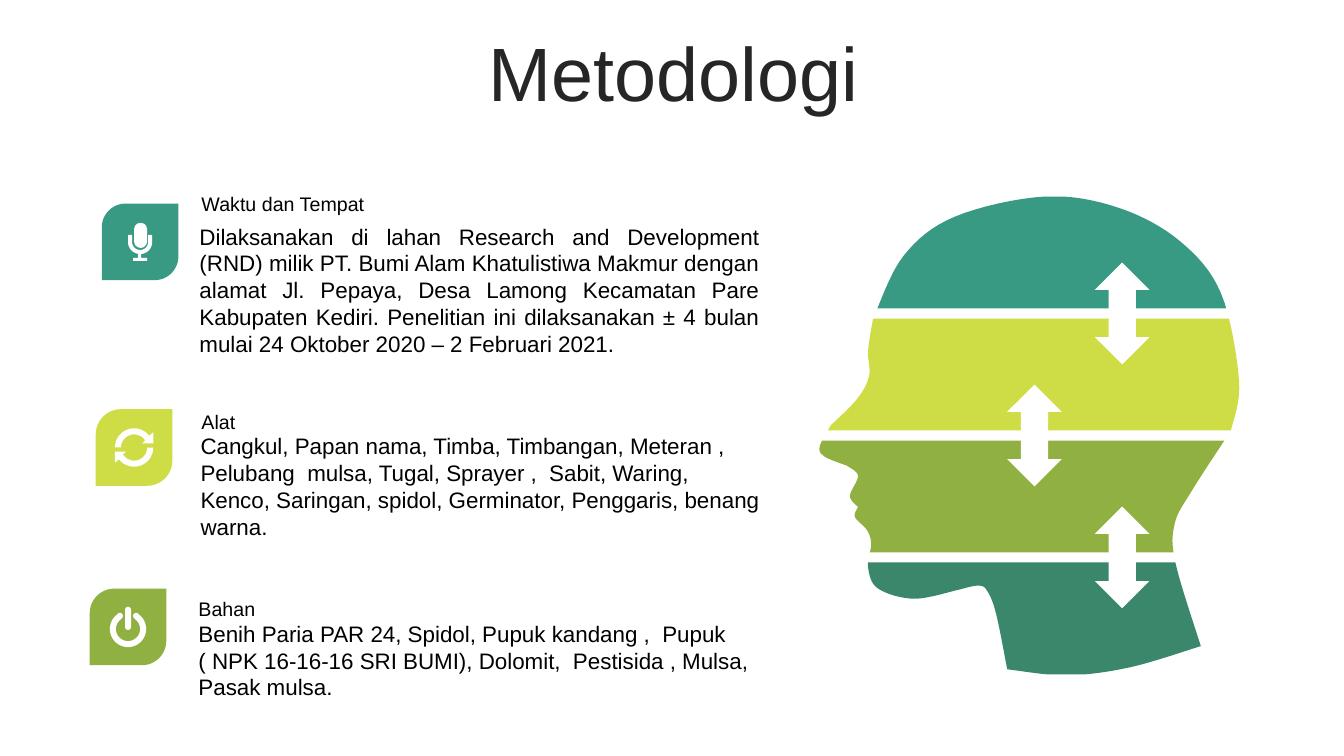
from dataclasses import dataclass
from math import cos, radians, sin
from typing import Callable

from pptx import Presentation
from pptx.dml.color import RGBColor
from pptx.enum.shapes import MSO_SHAPE
from pptx.enum.text import MSO_ANCHOR, PP_ALIGN
from pptx.util import Inches, Pt


@dataclass(frozen=True)
class Theme:
    font: str = "Arial"
    title_size: int = 54
    heading_size: int = 14
    body_size: int = 16
    ink: str = "000000"
    title_ink: str = "262626"
    white: str = "FFFFFF"
    teal: str = "399A84"
    lime: str = "CEDD46"
    olive: str = "90B141"
    forest: str = "3A876B"


THEME = Theme()
TILE = 0.76
TEXT_WIDTH = 5.75
BAND_HEIGHT, BAND_GAP = 1.11, 0.1
ARROW_WIDTH, ARROW_HEIGHT = 0.54, 1.01

HEAD_CONTOURS = {
    "skull": [(0.53, 1.21), (0.83, 0.59), (1.34, 0.2), (2.23, 0), (2.96, 0.11),
              (3.57, 0.44), (3.98, 0.96), (4.16, 1.83), (4.08, 2.32)],
    "nape": [(4.08, 2.32), (3.69, 2.92), (3.52, 3.25), (3.53, 3.64), (3.78, 4.46)],
    "shoulder": [(3.78, 4.46), (3.08, 4.67), (2.45, 4.75), (1.86, 4.69)],
    "throat": [(1.86, 4.69), (1.75, 4.14), (1.66, 3.91), (1.57, 3.86), (1.38, 3.9)],
    "chin": [(1.38, 3.9), (0.94, 3.99), (0.58, 3.89), (0.48, 3.68), (0.51, 3.45),
             (0.47, 3.31), (0.35, 3.18), (0.38, 3.08)],
    "lips": [(0.38, 3.08), (0.3, 2.97), (0.38, 2.77), (0.27, 2.67)],
    "nose": [(0.27, 2.67), (0.05, 2.58), (0, 2.48), (0.11, 2.27)],
    "brow": [(0.11, 2.27), (0.37, 2.01), (0.49, 1.78), (0.48, 1.53), (0.53, 1.21)],
}


def paint(shape, color):
    shape.shadow.inherit = False
    shape.fill.solid()
    shape.fill.fore_color.rgb = RGBColor.from_string(color)
    shape.line.fill.background()
    return shape


def add_preset(slide, kind, left, top, width, height, color):
    box = [Inches(length) for length in (left, top, width, height)]
    return paint(slide.shapes.add_shape(kind, *box), color)


def add_outline(slide, left, top, points, color):
    corners = [(Inches(x), Inches(y)) for x, y in points]
    builder = slide.shapes.build_freeform(*corners[0], scale=1.0)
    builder.add_line_segments(corners[1:], close=True)
    return paint(builder.convert_to_shape(Inches(left), Inches(top)), color)


def add_text(slide, text, left, top, width, height, size=THEME.body_size, color=THEME.ink,
             align=PP_ALIGN.LEFT, anchor=MSO_ANCHOR.TOP, line_spacing=None, before=0):
    box = [Inches(length) for length in (left, top, width, height)]
    frame = slide.shapes.add_textbox(*box).text_frame
    frame.word_wrap = True
    frame.vertical_anchor = anchor
    paragraph = frame.paragraphs[0]
    paragraph.alignment = align
    paragraph.line_spacing = line_spacing
    paragraph.space_before = Pt(before)
    run = paragraph.add_run()
    run.text = text
    run.font.name = THEME.font
    run.font.size = Pt(size)
    run.font.color.rgb = RGBColor.from_string(color)


def arc(radius, start, end, rise=0.0, steps=40):
    angles = [radians(start + (end - start) * step / steps) for step in range(steps + 1)]
    return [(radius * cos(angle), radius * sin(angle) + rise) for angle in angles]


def smooth(landmarks, steps=8):
    padded = [landmarks[0], *landmarks, landmarks[-1]]
    curve = []
    for before, start, end, after in zip(padded, padded[1:], padded[2:], padded[3:]):
        for step in range(steps):
            t = step / steps
            curve.append(tuple(
                b + ((c - a) * t + (2 * a - 5 * b + 4 * c - d) * t ** 2
                     + (3 * b - a - 3 * c + d) * t ** 3) / 2
                for a, b, c, d in zip(before, start, end, after)))
    return curve


def clip(points, level, side):
    kept = []
    for (x1, y1), (x2, y2) in zip(points, points[1:] + points[:1]):
        starts_inside, ends_inside = side * (y1 - level) >= 0, side * (y2 - level) >= 0
        if starts_inside:
            kept.append((x1, y1))
        if starts_inside != ends_inside:
            kept.append((x1 + (x2 - x1) * (level - y1) / (y2 - y1), level))
    return kept


def draw_microphone(slide, x, y):
    cradle = [(0.12, -0.07), *arc(0.12, 0, 180), (-0.12, -0.07),
              (-0.08, -0.07), *arc(0.08, 180, 0), (0.08, -0.07)]
    add_outline(slide, x, y, cradle, THEME.white)
    stem, foot = (-0.02, 0.11, 0.03, 0.06), (-0.07, 0.16, 0.14, 0.03)
    for left, top, width, height in (stem, foot):
        add_preset(slide, MSO_SHAPE.RECTANGLE, x + left, y + top, width, height, THEME.white)
    capsule = add_preset(slide, MSO_SHAPE.ROUNDED_RECTANGLE,
                         x - 0.06, y - 0.19, 0.13, 0.25, THEME.white)
    capsule.adjustments[0] = 0.5


def draw_refresh(slide, x, y):
    arrowhead = [(0.19, -0.15), (0.19, -0.04), (0.08, -0.04)]
    upper = [*arc(0.19, 180, 322), *arrowhead, *arc(0.13, 328, 180)]
    for turn in (1, -1):
        add_outline(slide, x, y, [(turn * px, turn * py) for px, py in upper], THEME.white)


def draw_power(slide, x, y):
    ring = [*arc(0.18, -58, 238, rise=0.02), *arc(0.12, 238, -58, rise=0.02)]
    add_outline(slide, x, y, ring, THEME.white)
    for side in (-1, 1):
        add_preset(slide, MSO_SHAPE.OVAL, x + side * 0.08 - 0.03, y - 0.14,
                   0.06, 0.06, THEME.white)
    switch = add_preset(slide, MSO_SHAPE.ROUNDED_RECTANGLE,
                        x - 0.03, y - 0.2, 0.06, 0.23, THEME.white)
    switch.adjustments[0] = 0.5


@dataclass(frozen=True)
class Section:
    left: float
    top: float
    heading: str
    heading_offset: tuple
    body: str
    body_offset: tuple
    color: str
    draw_icon: Callable
    corner: float
    align: PP_ALIGN = PP_ALIGN.LEFT


SECTIONS = [
    Section(1.01, 2.02, "Waktu dan Tempat", (0.89, -0.16),
            "Dilaksanakan di lahan Research and Development (RND) milik PT. Bumi Alam "
            "Khatulistiwa Makmur dengan alamat Jl. Pepaya, Desa Lamong Kecamatan Pare "
            "Kabupaten Kediri. Penelitian ini dilaksanakan ± 4 bulan mulai "
            "24 Oktober 2020 – 2 Februari 2021.",
            (0.87, 0.14), THEME.teal, draw_microphone, 0.31, PP_ALIGN.JUSTIFY),
    Section(0.95, 4.06, "Alat", (0.95, -0.04),
            "Cangkul, Papan nama, Timba, Timbangan, Meteran , Pelubang  mulsa, Tugal, "
            "Sprayer ,  Sabit, Waring, Kenco, Saringan, spidol, Germinator, Penggaris, "
            "benang warna.",
            (0.94, 0.18), THEME.lime, draw_refresh, 0.33),
    Section(0.89, 5.84, "Bahan", (0.98, 0.03),
            "Benih Paria PAR 24, Spidol, Pupuk kandang ,  Pupuk ( NPK 16-16-16 SRI BUMI), "
            "Dolomit,  Pestisida , Mulsa, Pasak mulsa.",
            (0.98, 0.26), THEME.olive, draw_power, 0.32),
]


def draw_section(slide, section):
    left, top = section.left, section.top
    (heading_x, heading_y), (body_x, body_y) = section.heading_offset, section.body_offset
    add_text(slide, section.body, left + body_x, top + body_y, TEXT_WIDTH, 1.18,
             align=section.align)
    add_text(slide, section.heading, left + heading_x, top + heading_y, TEXT_WIDTH, 0.34,
             size=THEME.heading_size)
    tile = add_preset(slide, MSO_SHAPE.ROUND_2_DIAG_RECTANGLE, left, top, TILE, TILE,
                      section.color)
    tile.adjustments[0] = section.corner
    section.draw_icon(slide, left + TILE / 2, top + TILE / 2)


def draw_head(slide, left, top):
    outline = [point for contour in HEAD_CONTOURS.values() for point in smooth(contour)]
    pitch = BAND_HEIGHT + BAND_GAP
    for row, color in enumerate((THEME.teal, THEME.lime, THEME.olive, THEME.forest)):
        below_top = clip(outline, row * pitch, 1)
        band = clip(below_top, row * pitch + BAND_HEIGHT, -1)
        add_outline(slide, left, top, band, color)
    for row, center in enumerate((3, 2.13, 3), start=1):
        gap_middle = row * pitch - BAND_GAP / 2
        add_preset(slide, MSO_SHAPE.UP_DOWN_ARROW, left + center - ARROW_WIDTH / 2,
                   top + gap_middle - ARROW_HEIGHT / 2, ARROW_WIDTH, ARROW_HEIGHT, THEME.white)


def main():
    deck = Presentation()
    deck.slide_width, deck.slide_height = Inches(13.33), Inches(7.5)
    slide = deck.slides.add_slide(deck.slide_layouts[6])
    add_text(slide, "Metodologi", 0.35, 0.37, 12.66, 0.79, size=THEME.title_size,
             color=THEME.title_ink, align=PP_ALIGN.CENTER, anchor=MSO_ANCHOR.MIDDLE,
             line_spacing=0.9, before=10)
    for section in SECTIONS:
        draw_section(slide, section)
    draw_head(slide, 8.13, 1.95)
    deck.save("out.pptx")


if __name__ == "__main__":
    main()
